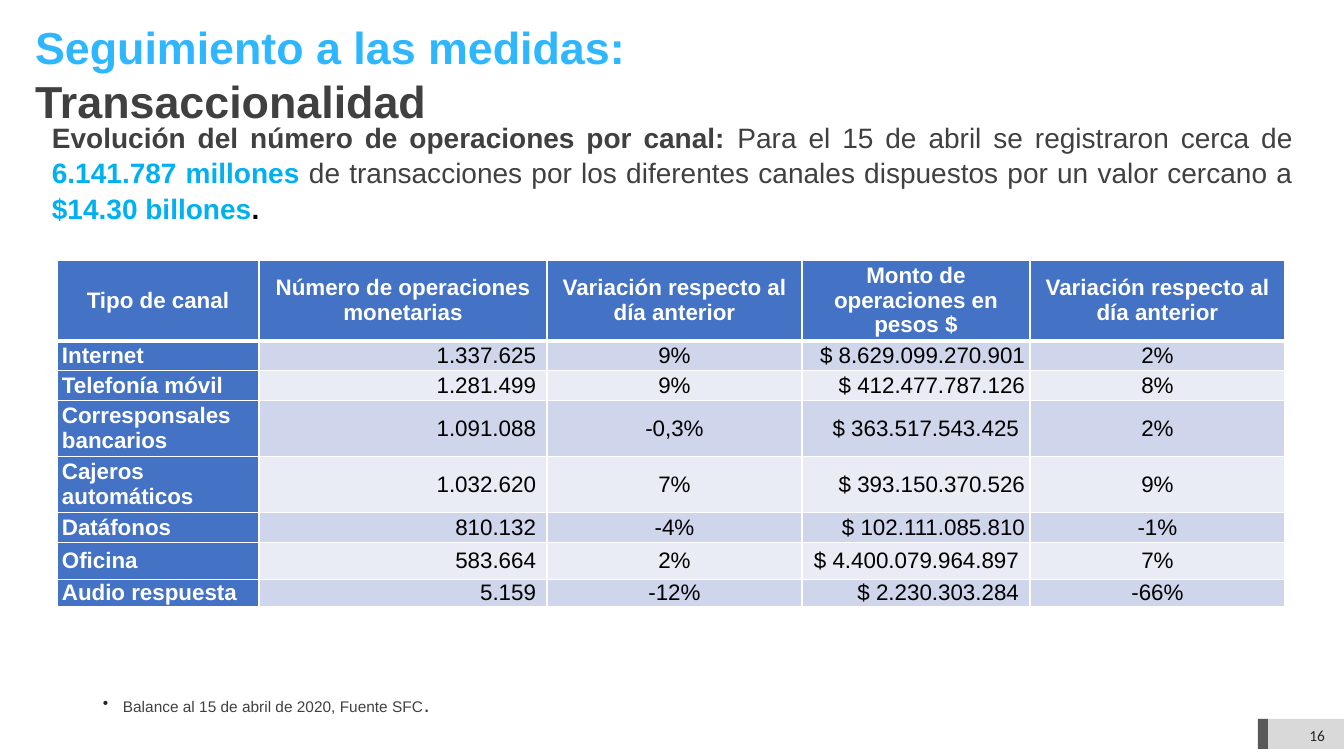
from lxml import etree
from pptx import Presentation
from pptx.dml.color import RGBColor
from pptx.enum.shapes import MSO_SHAPE
from pptx.enum.text import MSO_ANCHOR, MSO_AUTO_SIZE, PP_ALIGN
from pptx.oxml.ns import qn
from pptx.util import Pt

PX = 914400 / 100.8
RECTANGLE = MSO_SHAPE.RECTANGLE
TOP, MIDDLE = MSO_ANCHOR.TOP, MSO_ANCHOR.MIDDLE
LEFT, CENTER, RIGHT, JUSTIFY = PP_ALIGN.LEFT, PP_ALIGN.CENTER, PP_ALIGN.RIGHT, PP_ALIGN.JUSTIFY

COLORS = {
    "sky": "2EB7FF", "cyan": "00B0F0", "gray": "404040", "ink": "262626",
    "black": "000000", "white": "FFFFFF", "header": "4472C4",
    "band_dark": "CFD5EA", "band_light": "E9EBF5",
    "footer": "D9D9D9", "footer_edge": "595959",
}

HEADINGS = ["Tipo de canal", "Número de operaciones monetarias", "Variación respecto al día anterior",
            "Monto de operaciones en pesos $", "Variación respecto al día anterior"]
# Channel, operations, change, amount, change, right margin of the amount
CHANNELS = [
    ("Internet", "1.337.625", "9%", "$ 8.629.099.270.901", "2%", 5),
    ("Telefonía móvil", "1.281.499", "9%", "$ 412.477.787.126", "8%", 5),
    ("Corresponsales bancarios", "1.091.088", "-0,3%", "$ 363.517.543.425", "2%", 11),
    ("Cajeros automáticos", "1.032.620", "7%", "$ 393.150.370.526", "9%", 5),
    ("Datáfonos", "810.132", "-4%", "$ 102.111.085.810", "-1%", 5),
    ("Oficina", "583.664", "2%", "$ 4.400.079.964.897", "7%", 11),
    ("Audio respuesta", "5.159", "-12%", "$ 2.230.303.284", "-66%", 11),
]
COLUMN_WIDTHS = [202, 288, 255, 228, 255]
ROW_HEIGHTS = [56, 30, 30, 56, 56, 30, 37, 16]
COLUMN_ALIGNMENTS = [LEFT, RIGHT, CENTER, RIGHT, CENTER]


def px(length):
    return round(length * PX)


def color(name):
    return RGBColor.from_string(COLORS[name])


def add_run(paragraph, text, size, color_name, bold=False, font="Arial"):
    run = paragraph.add_run()
    run.text = text
    run.font.name = font
    run.font.size = Pt(size)
    run.font.bold = bold
    run.font.color.rgb = color(color_name)


def place(shape, box):
    shape.left, shape.top, shape.width, shape.height = map(px, box)


def add_text_box(slide, box, alignment, anchor=TOP):
    """Add a wrapping text box and return its first paragraph."""
    frame = slide.shapes.add_textbox(*map(px, box)).text_frame
    frame.word_wrap = True
    frame.vertical_anchor = anchor
    paragraph = frame.paragraphs[0]
    paragraph.alignment = alignment
    return paragraph


def add_title(slide, box):
    title = slide.shapes.title
    place(title, box)
    frame = title.text_frame
    frame.word_wrap = True
    frame.auto_size = MSO_AUTO_SIZE.NONE
    frame.vertical_anchor = TOP
    paragraph = frame.paragraphs[0]
    paragraph.alignment = LEFT
    add_run(paragraph, "Seguimiento a las medidas: ", 32, "sky", True)
    add_run(paragraph, "Transaccionalidad", 32, "gray", True)


def add_summary(slide, box):
    paragraph = add_text_box(slide, box, JUSTIFY)
    paragraph.line_spacing = 1.05
    for text, color_name, bold in [
        ("Evolución del número de operaciones por canal: ", "gray", True),
        ("Para el 15 de abril se registraron cerca de ", "gray", False),
        ("6.141.787 millones ", "cyan", True),
        ("de transacciones por los diferentes canales dispuestos por un valor cercano a ", "gray", False),
        ("$14.30 billones", "cyan", True),
        (".", "black", True),
    ]:
        add_run(paragraph, text, 20, color_name, bold)


def set_borders(cell, top, bottom):
    """Draw white cell borders: 1 pt at the sides, the given points above and below."""
    properties = cell._tc.get_or_add_tcPr()
    for position, (side, width) in enumerate([("L", 1), ("R", 1), ("T", top), ("B", bottom)]):
        line = etree.Element(qn(f"a:ln{side}"), w=str(Pt(width)))
        fill = etree.SubElement(line, qn("a:solidFill"))
        etree.SubElement(fill, qn("a:srgbClr"), val=COLORS["white"])
        properties.insert(position, line)


def fill_cell(cell, text, alignment, fill, text_color, bold, right_margin=5):
    cell.fill.solid()
    cell.fill.fore_color.rgb = color(fill)
    cell.vertical_anchor = MIDDLE
    cell.margin_left, cell.margin_right = px(5), px(right_margin)
    cell.margin_top = cell.margin_bottom = 0
    paragraph = cell.text_frame.paragraphs[0]
    paragraph.alignment = alignment
    add_run(paragraph, text, 16, text_color, bold)


def add_channel_table(slide, left, top):
    table = slide.shapes.add_table(
        len(ROW_HEIGHTS), len(COLUMN_WIDTHS), px(left), px(top),
        px(sum(COLUMN_WIDTHS)), px(sum(ROW_HEIGHTS))).table
    for column, width in zip(table.columns, COLUMN_WIDTHS):
        column.width = px(width)
    for row, height in zip(table.rows, ROW_HEIGHTS):
        row.height = px(height)
    for column, heading in enumerate(HEADINGS):
        cell = table.cell(0, column)
        fill_cell(cell, heading, CENTER, "header", "white", True)
        set_borders(cell, 1, 3)
    for row, (*values, amount_margin) in enumerate(CHANNELS, start=1):
        band = "band_dark" if row % 2 else "band_light"
        margins = [5, 11, 5, amount_margin, 5]
        for column, (value, margin) in enumerate(zip(values, margins)):
            cell = table.cell(row, column)
            is_channel = column == 0
            fill_cell(cell, value, COLUMN_ALIGNMENTS[column], "header" if is_channel else band,
                      "white" if is_channel else "black", is_channel, margin)
            set_borders(cell, 3 if row == 1 else 1, 1)


def add_source_note(slide, box):
    paragraph = add_text_box(slide, box, LEFT)
    properties = paragraph._p.get_or_add_pPr()
    properties.set("marL", str(px(20)))
    properties.set("indent", str(px(-20)))
    bullet_color = etree.SubElement(properties, qn("a:buClr"))
    etree.SubElement(bullet_color, qn("a:srgbClr"), val=COLORS["ink"])
    etree.SubElement(properties, qn("a:buFont"), typeface="Arial")
    etree.SubElement(properties, qn("a:buChar"), char="•")
    add_run(paragraph, "Balance al 15 de abril de 2020, Fuente SFC", 11, "gray")
    add_run(paragraph, ".", 16, "gray")


def add_page_number(slide, left, top, width, height):
    for bar_left, bar_width, fill in [(left + 1, width - 1, "footer"), (left, 10, "footer_edge")]:
        bar = slide.shapes.add_shape(RECTANGLE, *map(px, (bar_left, top, bar_width, height)))
        bar.shadow.inherit = False
        bar.fill.solid()
        bar.fill.fore_color.rgb = color(fill)
        bar.line.fill.background()
    paragraph = add_text_box(slide, (left + 5, top - 4, 72, height + 10), RIGHT, MIDDLE)
    add_run(paragraph, "16", 11, "ink", font="Calibri")


def main():
    presentation = Presentation()
    presentation.slide_width, presentation.slide_height = px(1344), px(756)
    slide = presentation.slides.add_slide(presentation.slide_layouts[5])
    add_title(slide, (25, 15, 1000, 65))
    add_summary(slide, (42, 114, 1261, 112))
    add_channel_table(slide, 57, 260)
    add_source_note(slide, (93, 685, 505, 37))
    add_page_number(slide, 1258, 719, 86, 30)
    presentation.save("out.pptx")


if __name__ == "__main__":
    main()
